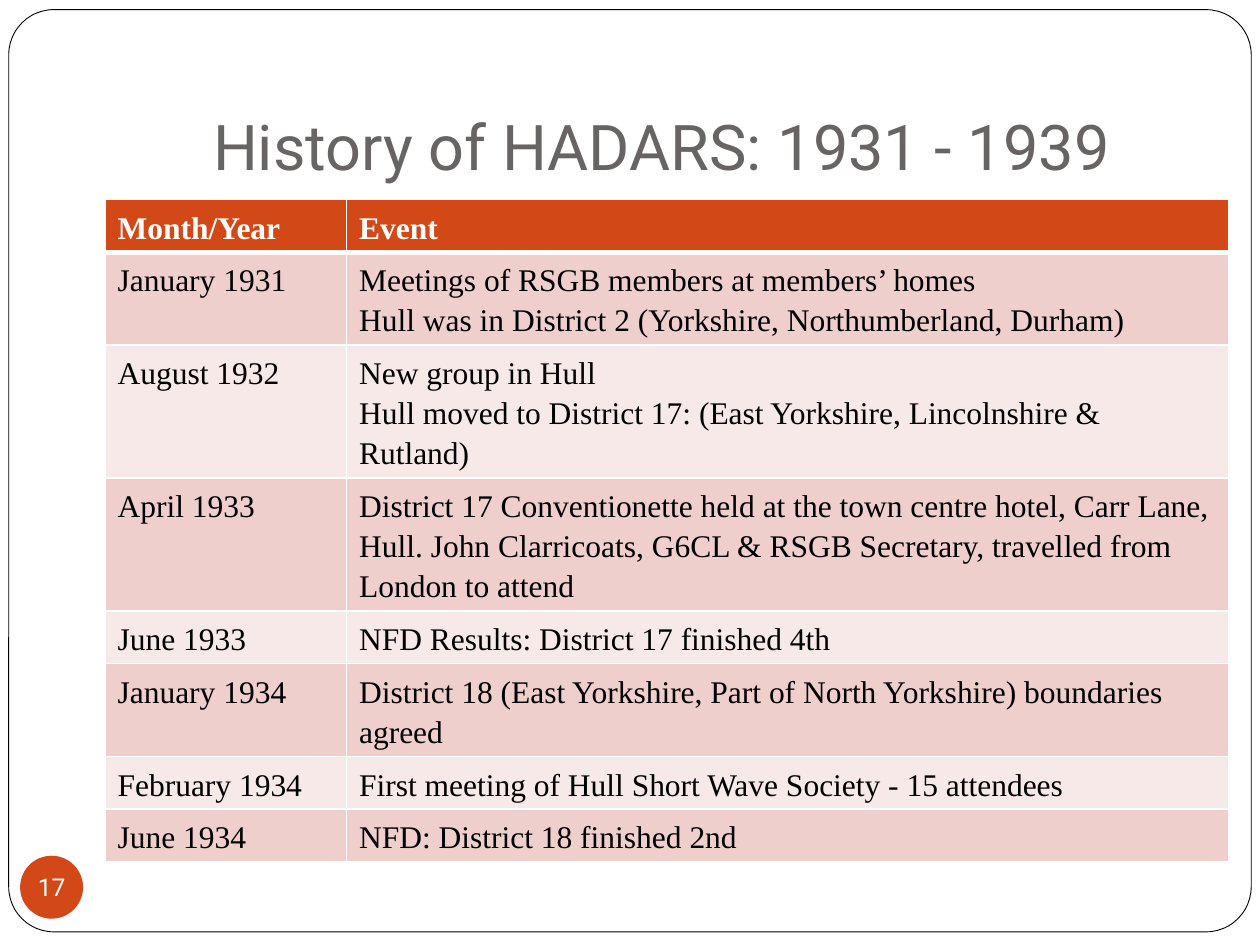
from lxml import etree
from pptx import Presentation
from pptx.dml.color import RGBColor
from pptx.enum import shapes, text
from pptx.oxml import ns
from pptx.util import Pt

WHITE = RGBColor(0xFF, 0xFF, 0xFF)
BLACK = RGBColor(0, 0, 0)
GREY = RGBColor(0x69, 0x64, 0x64)
ORANGE = RGBColor(0xD3, 0x48, 0x17)
DARK_BAND = RGBColor(0xEF, 0xCF, 0xCC)
LIGHT_BAND = RGBColor(0xF7, 0xE9, 0xE8)

HEADINGS = ("Month/Year", "Event")
EVENTS = [
    ("January 1931", "Meetings of RSGB members at members’ homes\n"
     "Hull was in District 2 (Yorkshire, Northumberland, Durham)"),
    ("August 1932", "New group in Hull\n"
     "Hull moved to District 17: (East Yorkshire, Lincolnshire & Rutland)"),
    ("April 1933", "District 17 Conventionette held at the town centre hotel, Carr Lane, "
     "Hull. John Clarricoats, G6CL & RSGB Secretary, travelled from London to attend"),
    ("June 1933", "NFD Results: District 17 finished 4th"),
    ("January 1934", "District 18 (East Yorkshire, Part of North Yorkshire) boundaries agreed"),
    ("February 1934", "First meeting of Hull Short Wave Society - 15 attendees"),
    ("June 1934", "NFD: District 18 finished 2nd"),
]


def format_text(frame, font_name, size, color, bold=False, align=None, spacing=None):
    for paragraph in frame.paragraphs:
        paragraph.alignment = align
        paragraph.line_spacing = spacing
        for run in paragraph.runs:
            run.font.name = font_name
            run.font.size = Pt(size)
            run.font.color.rgb = color
            run.font.bold = bold


def set_margins(frame, left, top, right, bottom):
    frame.margin_left, frame.margin_top = Pt(left), Pt(top)
    frame.margin_right, frame.margin_bottom = Pt(right), Pt(bottom)


def add_border_frame(slide):
    border = slide.shapes.add_shape(
        shapes.MSO_SHAPE.ROUNDED_RECTANGLE, Pt(5), Pt(5.5), Pt(710), Pt(527))
    border.adjustments[0] = 0.049
    border.shadow.inherit = False
    border.fill.solid()
    border.fill.fore_color.rgb = WHITE
    border.line.color.rgb = BLACK
    border.line.width = Pt(0.5)
    slide.shapes.title._element.addprevious(border._element)


def set_title(slide, wording):
    title = slide.shapes.title
    title.left, title.top, title.width, title.height = Pt(72), Pt(21.6), Pt(612), Pt(90)
    frame = title.text_frame
    frame.text = wording
    frame.auto_size = text.MSO_AUTO_SIZE.NONE
    frame.vertical_anchor = text.MSO_ANCHOR.BOTTOM
    set_margins(frame, 7.2, 3.6, 7.2, 7.2)
    format_text(frame, "Roboto", 36, GREY, align=text.PP_ALIGN.CENTER)


def add_page_badge(slide, number):
    badge = slide.shapes.add_shape(
        shapes.MSO_SHAPE.OVAL, Pt(11.5), Pt(489), Pt(36), Pt(36))
    badge.shadow.inherit = False
    badge.fill.solid()
    badge.fill.fore_color.rgb = ORANGE
    badge.line.fill.background()
    frame = badge.text_frame
    frame.text = number
    frame.word_wrap = False
    frame.vertical_anchor = text.MSO_ANCHOR.MIDDLE
    set_margins(frame, 0, 0, 0, 0)
    format_text(frame, "Roboto", 14, WHITE, align=text.PP_ALIGN.CENTER)


def set_cell_borders(cell, widths):
    properties = cell._tc.get_or_add_tcPr()
    for side, width in widths.items():
        line = etree.SubElement(properties, ns.qn(f"a:ln{side}"), w=str(Pt(width)))
        fill = etree.SubElement(line, ns.qn("a:solidFill"))
        etree.SubElement(fill, ns.qn("a:srgbClr"), val=str(WHITE))


def add_history_table(slide):
    rows = [HEADINGS, *EVENTS]
    history = slide.shapes.add_table(
        len(rows), len(HEADINGS), Pt(60), Pt(114), Pt(642), Pt(29.2 * len(rows))).table
    history.columns[0].width = Pt(138)
    history.columns[1].width = Pt(504)
    for row_index, row in enumerate(rows):
        is_heading = row_index == 0
        band = ORANGE if is_heading else DARK_BAND if row_index % 2 else LIGHT_BAND
        top = 3 if row_index == 1 else 1
        bottom = 3 if is_heading else 1
        for column_index, wording in enumerate(row):
            cell = history.cell(row_index, column_index)
            cell.text_frame.text = wording
            format_text(cell.text_frame, "Times New Roman", 18,
                        WHITE if is_heading else BLACK, bold=is_heading, spacing=1.15)
            set_cell_borders(cell, {"L": 1, "R": 1, "T": top, "B": bottom})
            cell.fill.solid()
            cell.fill.fore_color.rgb = band


def main():
    deck = Presentation()
    deck.slide_width, deck.slide_height = Pt(720), Pt(540)
    slide = deck.slides.add_slide(deck.slide_layouts[5])
    add_border_frame(slide)
    set_title(slide, "History of HADARS: 1931 - 1939")
    add_page_badge(slide, "17")
    add_history_table(slide)
    deck.save("out.pptx")


if __name__ == "__main__":
    main()
